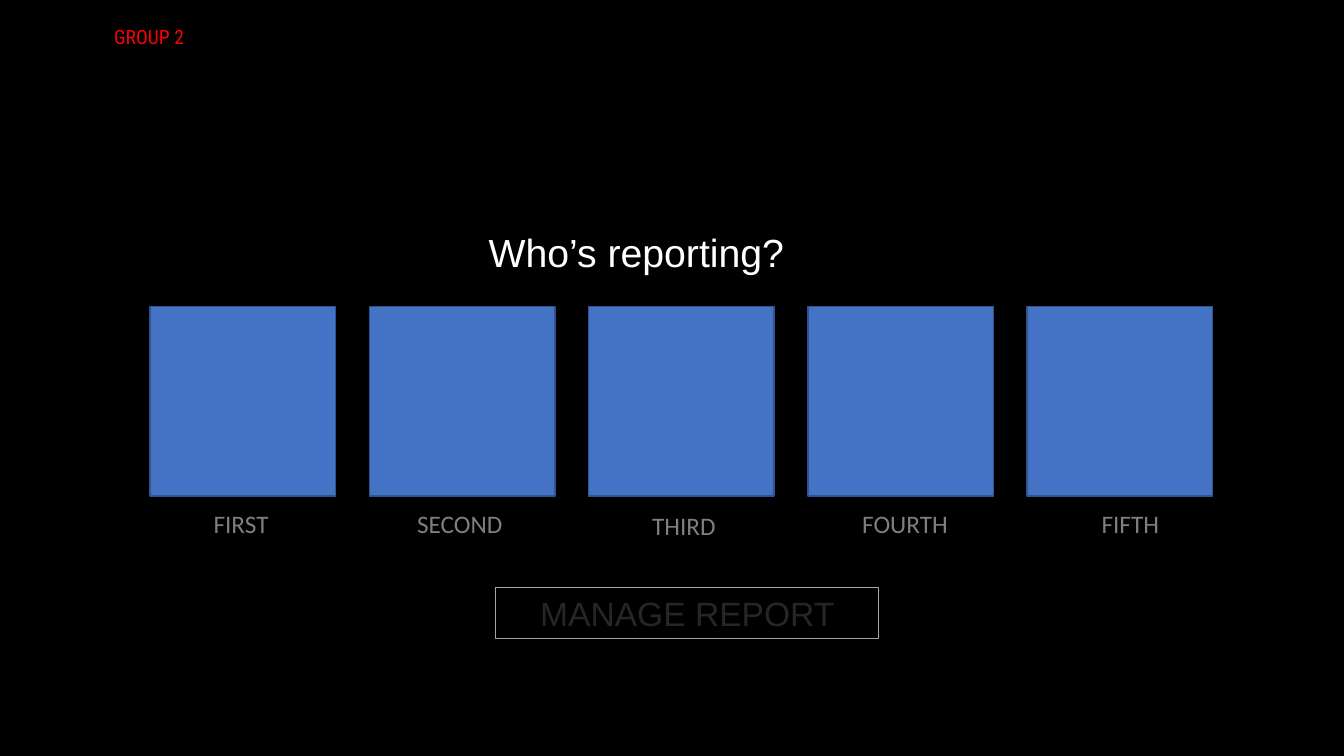
from pptx import Presentation
from pptx.dml.color import RGBColor
from pptx.enum.shapes import MSO_SHAPE
from pptx.enum.text import MSO_ANCHOR, MSO_AUTO_SIZE, PP_ALIGN
from pptx.util import Pt

RECTANGLE = MSO_SHAPE.RECTANGLE
TOP = MSO_ANCHOR.TOP
FIT_SHAPE = MSO_AUTO_SIZE.SHAPE_TO_FIT_TEXT
FIXED = MSO_AUTO_SIZE.NONE
LEFT, CENTER = PP_ALIGN.LEFT, PP_ALIGN.CENTER

TILE_WIDTH, TILE_HEIGHT = 132.5, 135.4
# label, offset from the tile's left, gap below the tile, label width
REPORTERS = [
    ("FIRST", 38.2, 5, 56.2),
    ("SECOND", 27, 5, 78.5),
    ("THIRD", 38.2, 6.4, 69.1),
    ("FOURTH", 31.7, 5, 78.5),
    ("FIFTH", 46.1, 5, 69.1),
]


def color(hex_string):
    return RGBColor.from_string(hex_string)


def write(shape, text, size, font, hex_color, align=LEFT, fit=FIT_SHAPE):
    frame = shape.text_frame
    frame.word_wrap = True
    frame.auto_size = fit
    frame.vertical_anchor = TOP
    paragraph = frame.paragraphs[0]
    paragraph.text = text
    paragraph.alignment = align
    for run in paragraph.runs:
        run.font.size = Pt(size)
        run.font.name = font
        run.font.color.rgb = color(hex_color)


def add_text(slide, box, *style, **options):
    write(slide.shapes.add_textbox(*map(Pt, box)), *style, **options)


def add_box(slide, box, line, line_width, fill=None):
    shape = slide.shapes.add_shape(RECTANGLE, *map(Pt, box))
    shape.shadow.inherit = False
    if fill:
        shape.fill.solid()
        shape.fill.fore_color.rgb = color(fill)
    else:
        shape.fill.background()
    shape.line.color.rgb = color(line)
    shape.line.width = Pt(line_width)
    return shape


def add_reporters(slide, box):
    """Spread the reporter tiles evenly across the box, each with its label below."""
    left, top, width, height = box
    pitch = (width - TILE_WIDTH) / (len(REPORTERS) - 1)
    for index, (label, offset, gap, label_width) in enumerate(REPORTERS):
        tile_left = left + index * pitch
        add_box(slide, (tile_left, top, TILE_WIDTH, height), "31538F", 1, "4472C4")
        add_text(slide, (tile_left + offset, top + height + gap, label_width, 29),
                 label, 18, "Calibri", "7F7F7F")


def add_manage_button(slide, box):
    button = add_box(slide, box, "A5A5A5", 0.75)
    write(button, "MANAGE REPORT", 24, "Arial", "262626", CENTER)


def add_reporting_slide(presentation):
    slide = presentation.slides.add_slide(presentation.slide_layouts[6])
    slide.background.fill.solid()
    slide.background.fill.fore_color.rgb = color("000000")
    add_reporters(slide, (107.3, 218.9, 758.9, TILE_HEIGHT))
    add_text(slide, (342, 159.8, 273.6, 41), "Who’s reporting?", 28, "Arial", "FFFFFF")
    add_manage_button(slide, (354.2, 419.8, 273.6, 36.3))
    add_text(slide, (15.1, 14.4, 182.9, 54.7), "GROUP 2", 14, "Roboto Condensed",
             "FF0000", align=CENTER, fit=FIXED)


def main():
    presentation = Presentation()
    presentation.slide_width = Pt(960)
    presentation.slide_height = Pt(540)
    add_reporting_slide(presentation)
    presentation.save("out.pptx")


if __name__ == "__main__":
    main()
